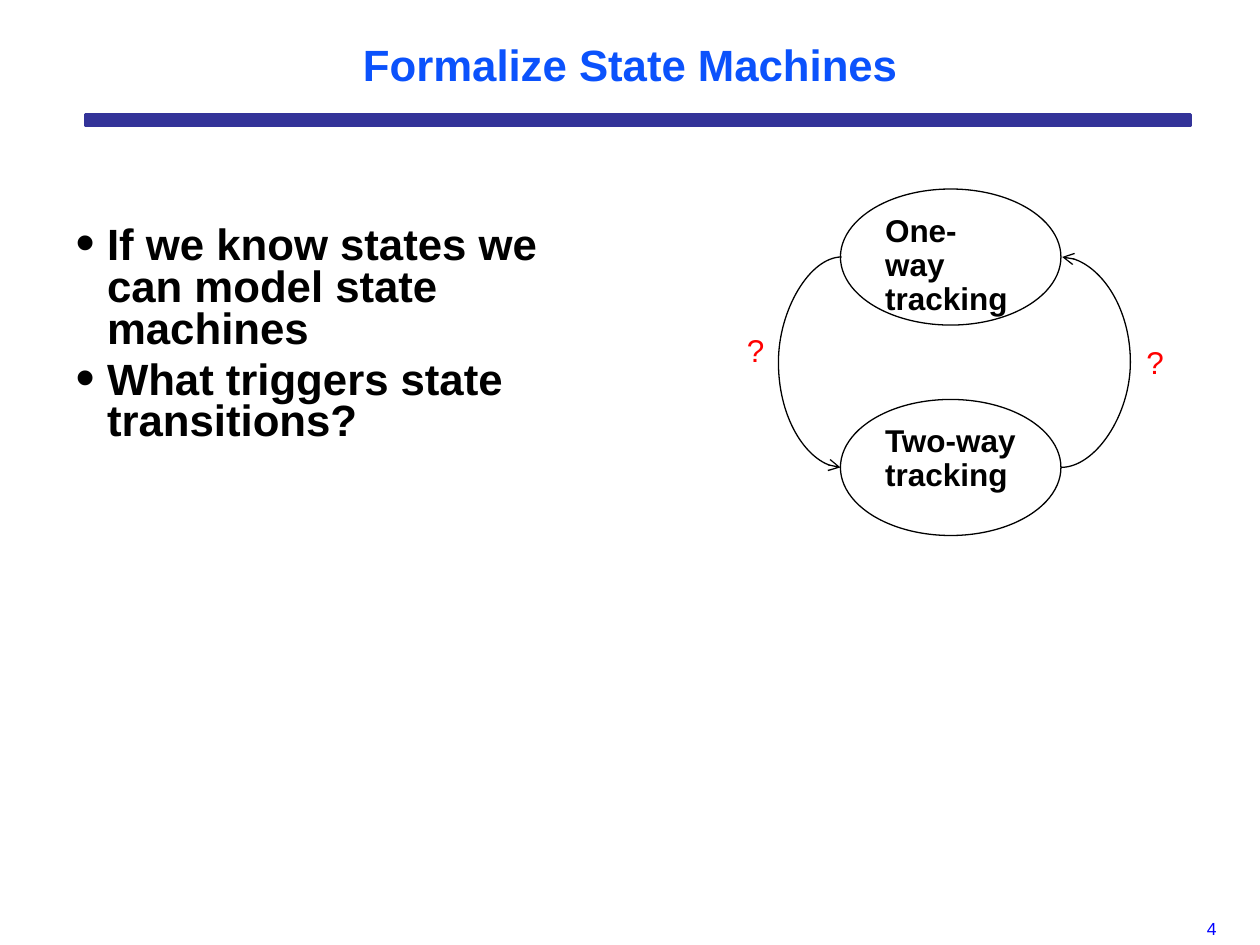
import pptx
import pptx.dml.color
import pptx.enum.shapes
import pptx.enum.text
import pptx.oxml.ns
import pptx.util
from lxml import etree

Inches = pptx.util.Inches
Pt = pptx.util.Pt
qn = pptx.oxml.ns.qn
ALIGN = pptx.enum.text.PP_ALIGN
ANCHOR = pptx.enum.text.MSO_ANCHOR
SHAPE = pptx.enum.shapes.MSO_SHAPE

COLORS = {"bar": "333399", "title": "0B52FC", "text": "000000",
          "fill": "FFFFFF", "trigger": "FF0000", "number": "0000FF"}
FONT = "Arial"

TITLE = "Formalize State Machines"
BULLETS = ["If we know states we can model state machines",
           "What triggers state transitions?"]
STATES = ["One-way tracking", "Two-way tracking"]
# text, left, top, width, height, size, color
LABELS = [("?", 5.83, 2.58, 0.34, 0.4, 18, "trigger"),
          ("?", 9, 2.67, 0.34, 0.4, 18, "trigger"),
          ("4", 9.48, 7.24, 0.35, 0.26, 10, "number")]

STATE_LEFT, STATE_TOP, STATE_WIDTH, STATE_HEIGHT = 6.67, 1.5, 1.75, 1.08
STATE_STEP = 1.67
CURVE_WIDTH = 0.01
# left edge of the curve, sideways bulge, rotation in degrees
TRANSITIONS = [(STATE_LEFT, 0.51, 180),
               (STATE_LEFT + STATE_WIDTH, 0.56, 0)]


def rgb(name):
    return pptx.dml.color.RGBColor.from_string(COLORS[name])


def place(shape, left, top, width, height):
    shape.left, shape.top = Inches(left), Inches(top)
    shape.width, shape.height = Inches(width), Inches(height)


def add_bullet(paragraph, indent=0.25):
    properties = paragraph._p.get_or_add_pPr()
    properties.set("marL", str(Inches(indent)))
    properties.set("indent", str(-Inches(indent)))
    etree.SubElement(properties, qn("a:buSzPct")).set("val", "125000")
    etree.SubElement(properties, qn("a:buFont")).set("typeface", FONT)
    etree.SubElement(properties, qn("a:buChar")).set("char", "•")


def write(shape, texts, size, color="text", bold=False, align=ALIGN.LEFT,
          spacing=1.0, after=0, bullets=False, wrap=True):
    frame = shape.text_frame
    frame.word_wrap = wrap
    frame.vertical_anchor = ANCHOR.TOP
    for index, text in enumerate(texts):
        paragraph = frame.add_paragraph() if index else frame.paragraphs[0]
        paragraph.text = text
        paragraph.alignment = align
        paragraph.line_spacing = spacing
        paragraph.space_before = Pt(0)
        paragraph.space_after = Pt(after)
        if bullets:
            add_bullet(paragraph)
        font = paragraph.font
        font.name, font.size, font.bold = FONT, Pt(size), bold
        font.color.rgb = rgb(color)


def add_box(slide, kind, left, top, width, height, fill, line, weight):
    shape = slide.shapes.add_shape(kind, Inches(left), Inches(top),
                                   Inches(width), Inches(height))
    shape.shadow.inherit = False
    shape.fill.solid()
    shape.fill.fore_color.rgb = rgb(fill)
    shape.line.color.rgb = rgb(line)
    shape.line.width = Pt(weight)
    return shape


def add_transition(slide, left, bulge, rotation):
    """Curve from the lower to the upper state; a half turn reverses it."""
    top = STATE_TOP + STATE_HEIGHT / 2
    curve = slide.shapes.add_connector(
        pptx.enum.shapes.MSO_CONNECTOR.CURVE,
        Inches(left), Inches(top + STATE_STEP),
        Inches(left + CURVE_WIDTH), Inches(top))
    curve.line.color.rgb = rgb("text")
    curve.line.width = Pt(0.75)
    properties = curve._element.spPr
    if rotation:
        properties.find(qn("a:xfrm")).set("rot", str(rotation * 60000))
    guides = properties.find(qn("a:prstGeom")).find(qn("a:avLst"))
    guide = etree.SubElement(guides, qn("a:gd"))
    guide.set("name", "adj1")
    guide.set("fmla", f"val {round(bulge / CURVE_WIDTH * 100000)}")
    line = properties.find(qn("a:ln"))
    etree.SubElement(line, qn("a:tailEnd")).set("type", "arrow")
    etree.SubElement(properties, qn("a:effectLst"))


def main():
    presentation = pptx.Presentation()
    presentation.slide_width = Inches(10)
    presentation.slide_height = Inches(7.5)
    slide = presentation.slides.add_slide(presentation.slide_layouts[1])

    add_box(slide, SHAPE.RECTANGLE, 0.68, 0.91, 8.77, 0.09, "bar", "bar", 1.5)

    title, body = slide.placeholders
    place(title, 0.5, 0.3, 9, 1.25)
    write(title, [TITLE], 25, color="title", bold=True, align=ALIGN.CENTER,
          spacing=0.9)
    place(body, 0.5, 1.75, 3.92, 4.95)
    write(body, BULLETS, 25, bold=True, spacing=0.8, after=5, bullets=True)

    for index, name in enumerate(STATES):
        state = add_box(slide, SHAPE.OVAL, STATE_LEFT,
                        STATE_TOP + index * STATE_STEP,
                        STATE_WIDTH, STATE_HEIGHT, "fill", "text", 0.75)
        write(state, [name], 18, bold=True, spacing=0.9, after=1.8)

    for transition in TRANSITIONS:
        add_transition(slide, *transition)

    for text, left, top, width, height, size, color in LABELS:
        label = slide.shapes.add_textbox(Inches(left), Inches(top),
                                         Inches(width), Inches(height))
        write(label, [text], size, color=color, wrap=False)

    presentation.save("out.pptx")


if __name__ == "__main__":
    main()
